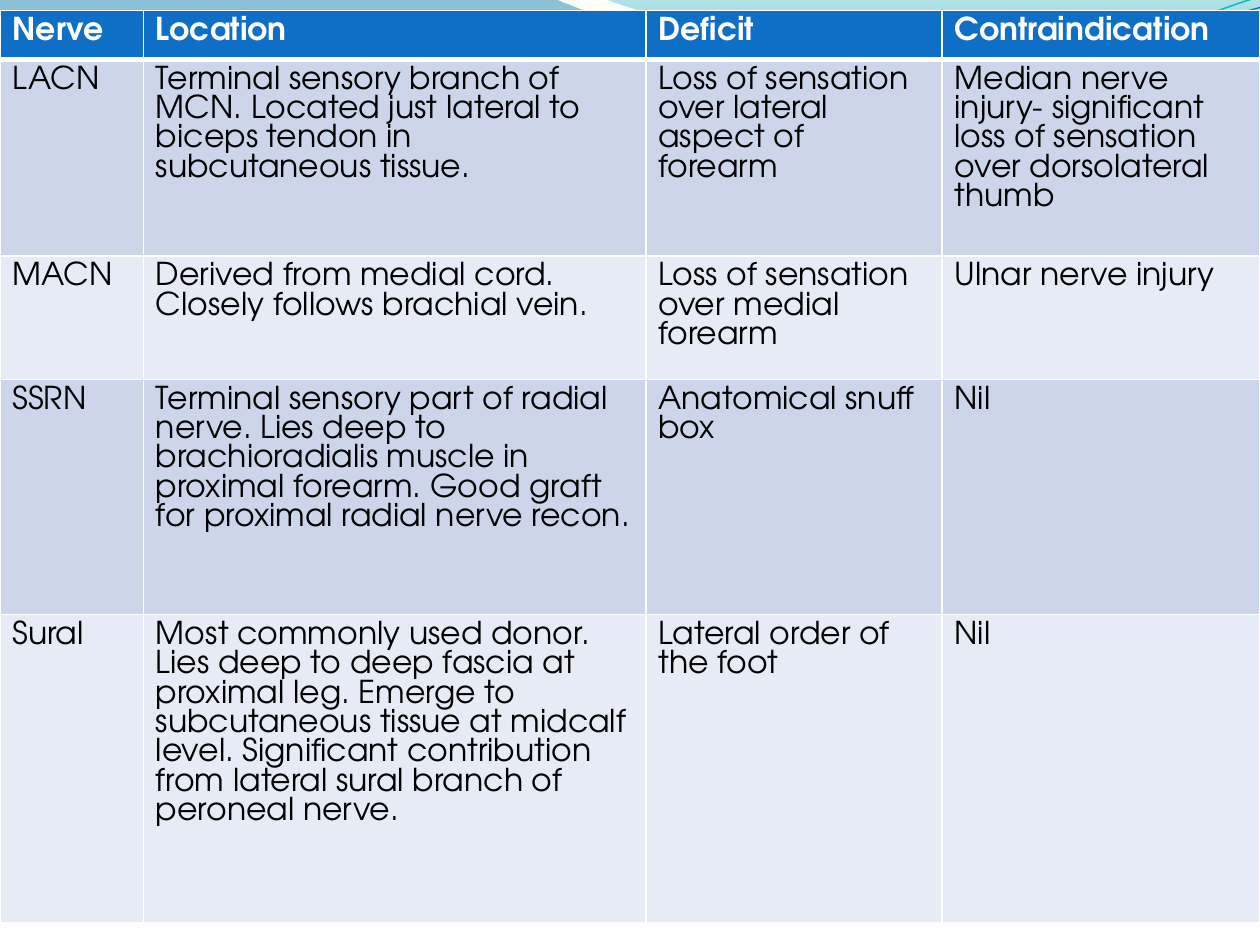
import math

from lxml import etree
from pptx import Presentation
from pptx import util as u
from pptx.dml.color import RGBColor
from pptx.oxml.ns import qn

COLORS = {
    "header": "0F6FC6", "odd": "CCD5EA", "even": "E7EBF5",
    "white": "FFFFFF", "black": "000000",
    "deep": "0074A1", "aqua": "00C6CF", "teal": "00A1A9", "sky": "008BBF",
    "thread": "0AB8BF",
}
INCH = 2.54
TILT = 2.7

COLUMN_WIDTHS = [2.89, 10.13, 5.97, 6.41]
ROW_HEIGHTS = [0.99, 3.96, 2.49, 4.74, 6.22]
NERVES = [
    ["Nerve", "Location", "Deficit", "Contraindication"],
    ["LACN",
     "Terminal sensory branch of MCN. Located just lateral to biceps tendon in subcutaneous tissue.",
     "Loss of sensation over lateral aspect of forearm",
     "Median nerve injury- significant loss of sensation over dorsolateral thumb"],
    ["MACN",
     "Derived from medial cord. Closely follows brachial vein.",
     "Loss of sensation over medial forearm",
     "Ulnar nerve injury"],
    ["SSRN",
     "Terminal sensory part of radial nerve. Lies deep to brachioradialis muscle in proximal "
     "forearm. Good graft for proximal radial nerve recon.",
     "Anatomical snuff box",
     "Nil"],
    ["Sural",
     "Most commonly used donor. Lies deep to deep fascia at proximal leg. Emerge to subcutaneous "
     "tissue at midcalf level. Significant contribution from lateral sural branch of peroneal nerve.",
     "Lateral order of the foot",
     "Nil"],
]

WIDE_WAVE = [
    [(0, 0)], [(4.4, -0.01)], [(4.76, 0.17), (6.64, 0.63), (7.58, 0.63)],
    [(8.53, 0.63), (9.58, 0.26), (10, 0.09)], [(10.01, 0.36)],
    [(9.83, 0.44), (8.7, 0.76), (7.46, 0.75)], [(6.22, 0.75), (3.82, 0.28), (2.57, 0.34)],
    [(1.29, 0.36), (0.46, 0.83), (-0.01, 1.13)], [(0, 0)],
]
RIGHT_WAVE = [
    [(4.79, -0.01)], [(5.09, 0.11), (6.82, 0.62), (7.69, 0.65)],
    [(8.56, 0.69), (9.61, 0.32), (10, 0.21)], [(10, 0)], [(4.79, -0.01)],
]
UPPER_THREAD = [
    [(0, 1.11)], [(0.48, 0.93), (1.58, 0.57), (2.77, 0.52)],
    [(3.95, 0.47), (5.93, 0.89), (7.13, 0.8)], [(8.33, 0.71), (9.38, 0.15), (9.98, -0.02)],
]
LOWER_THREAD = [
    [(0, 1.04)], [(0.47, 0.96), (1.64, 0.61), (2.83, 0.56)],
    [(4.03, 0.51), (5.97, 0.84), (7.17, 0.75)], [(8.36, 0.67), (9.41, 0.21), (10, 0.06)],
]


def rgb(name):
    return RGBColor.from_string(COLORS[name])


def turn(point, center, degrees):
    angle = math.radians(degrees)
    dx, dy = point[0] - center[0], point[1] - center[1]
    return (center[0] + dx * math.cos(angle) - dy * math.sin(angle),
            center[1] + dx * math.sin(angle) + dy * math.cos(angle))


class NerveSlide:
    font = "TeX Gyre Adventor"
    size = u.Pt(18)

    def __init__(self, slide):
        self.slide = slide

    def outline(self, steps, closed):
        steps = [[(u.Cm(x * INCH), u.Cm(y * INCH)) for x, y in step] for step in steps]
        anchors = [step[-1] for step in steps]
        builder = self.slide.shapes.build_freeform(*anchors[0])
        builder.add_line_segments(anchors[1:], close=closed)
        curve = builder.convert_to_shape()
        curve.shadow.inherit = False
        segments = list(curve._element.iter(qn("a:lnTo")))
        for segment, step in zip(segments, steps[1:]):
            if len(step) == 3:
                segment.tag = qn("a:cubicBezTo")
                for index, (x, y) in enumerate(step[:2]):
                    handle = etree.Element(qn("a:pt"), x=str(x - curve.left), y=str(y - curve.top))
                    segment.insert(index, handle)
        return curve

    def wave(self, steps, stops):
        band = self.outline(steps, True)
        band.line.fill.background()
        band.fill.gradient()
        band.fill.gradient_angle = 270
        for stop, (position, color, _) in zip(band.fill.gradient_stops, stops):
            stop.position = position
            stop.color.rgb = rgb(color)
        tints = band._element.spPr.iter(qn("a:srgbClr"))
        for tint, (_, _, opacity) in zip(tints, stops):
            etree.SubElement(tint, qn("a:alpha"), val=str(opacity * 1000))

    def thread(self, steps, center, color, width):
        level = [[turn(point, center, TILT) for point in step] for step in steps]
        strand = self.outline(level, False)
        strand.rotation = 360 - TILT
        strand.fill.background()
        strand.line.color.rgb = rgb(color)
        strand.line.width = u.Pt(width)

    def borders(self, cell, bottom):
        properties = cell._tc.get_or_add_tcPr()
        widths = {"lnL": 1, "lnR": 1, "lnT": 1, "lnB": bottom}
        for index, (side, width) in enumerate(widths.items()):
            edge = etree.Element(qn("a:" + side), w=str(u.Pt(width)))
            paint = etree.SubElement(edge, qn("a:solidFill"))
            etree.SubElement(paint, qn("a:srgbClr"), val=COLORS["white"])
            properties.insert(index, edge)

    def fill_cell(self, cell, wording, row):
        heading = row == 0
        cell.fill.solid()
        cell.fill.fore_color.rgb = rgb("header" if heading else "odd" if row % 2 else "even")
        self.borders(cell, 3 if heading else 1)
        run = cell.text_frame.paragraphs[0].add_run()
        run.text = wording
        run.font.name = self.font
        run.font.size = self.size
        run.font.bold = heading
        run.font.color.rgb = rgb("white" if heading else "black")

    def table(self, rows, left, top, widths, heights):
        frame = self.slide.shapes.add_table(
            len(rows), len(widths), u.Cm(left), u.Cm(top),
            u.Cm(sum(widths)), u.Cm(sum(heights)))
        grid = frame.table
        for column, width in zip(grid.columns, widths):
            column.width = u.Cm(width)
        for row, height in zip(grid.rows, heights):
            row.height = u.Cm(height)
        for r, wordings in enumerate(rows):
            for c, wording in enumerate(wordings):
                self.fill_cell(grid.cell(r, c), wording, r)


def main():
    deck = Presentation()
    deck.slide_width, deck.slide_height = u.Cm(25.4), u.Cm(19.05)
    page = NerveSlide(deck.slides.add_slide(deck.slide_layouts[6]))
    page.wave(WIDE_WAVE, [(0, "deep", 45), (1, "aqua", 55)])
    page.wave(RIGHT_WAVE, [(0, "teal", 30), (0.8, "sky", 45)])
    page.thread(UPPER_THREAD, (4.99, 0.58), "thread", 0.85)
    page.thread(LOWER_THREAD, (5, 0.59), "header", 0.75)
    page.table(NERVES, 0, 0.21, COLUMN_WIDTHS, ROW_HEIGHTS)
    deck.save("out.pptx")


if __name__ == "__main__":
    main()
